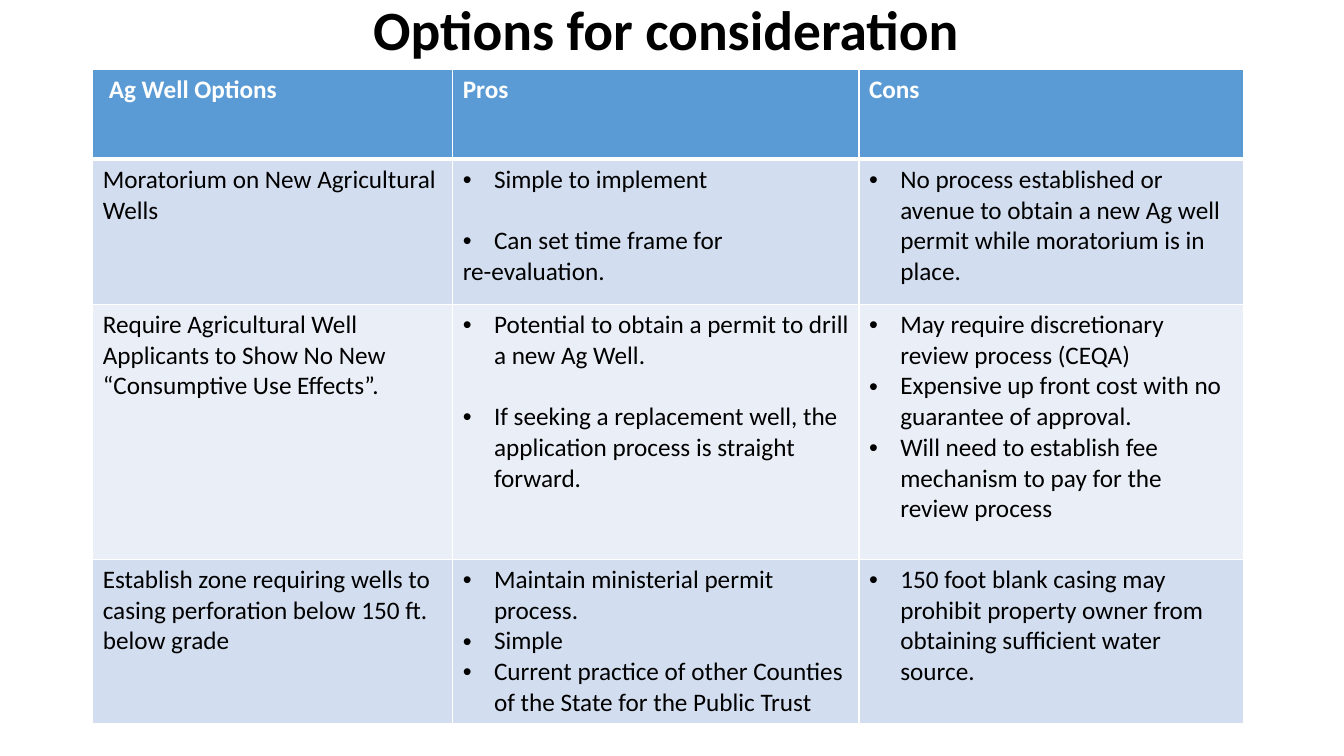
from lxml.etree import SubElement
from pptx import Presentation
from pptx.dml.color import RGBColor
from pptx.enum.text import MSO_ANCHOR, MSO_AUTO_SIZE, PP_ALIGN
from pptx.oxml import parse_xml
from pptx.oxml.ns import nsdecls, qn
from pptx.util import Emu, Inches, Pt

WIDTH, HEIGHT = Inches(13.33), Inches(7.5)
TITLE_BOX = (0.064, 0.021, 0.863, 0.043)
TABLE_BOX = (0.069, 0.092, 0.856, 0.864)
COLUMN_UNITS = (3.57, 4.03, 3.81)
ROW_UNITS = (0.89, 1.44, 2.53, 1.62)
HEADER_FILL, BAND_FILLS = "5B9BD5", ("D2DEEF", "EAEFF7")
WHITE, BLACK = "FFFFFF", "000000"
TITLE_FONT = {"name": "Calibri", "size": Pt(39.6), "bold": True}
HEADER_FONT = {"name": "Calibri", "size": Pt(18), "bold": True}
BODY_FONT = {"name": "Calibri", "size": Pt(18), "bold": False}
HANGING = Inches(0.31)
LINE_GAP = Pt(22)

HEADERS = ("Ag Well Options", "Pros", "Cons")
OPTIONS = (
    (
        [("plain", "Moratorium on New Agricultural Wells")],
        [("point", "Simple to implement"),
         ("spaced point", "Can set time frame for"),
         ("plain", "re-evaluation.")],
        [("point", "No process established or avenue to obtain a new Ag well "
                   "permit while moratorium is in place.")],
    ),
    (
        [("plain", "Require Agricultural Well Applicants to Show No New "
                   "“Consumptive Use Effects”.")],
        [("point", "Potential to obtain a permit to drill a new Ag Well."),
         ("spaced point", "If seeking a replacement well, the application "
                          "process is straight forward.")],
        [("point", "May require discretionary review process (CEQA)"),
         ("point", "Expensive up front cost with no guarantee of approval."),
         ("point", "Will need to establish fee mechanism to pay for the "
                   "review process")],
    ),
    (
        [("plain", "Establish zone requiring wells to casing perforation "
                   "below 150 ft. below grade")],
        [("point", "Maintain ministerial permit process."),
         ("point", "Simple"),
         ("point", "Current practice of other Counties of the State for the "
                   "Public Trust")],
        [("point", "150 foot blank casing may prohibit property owner from "
                   "obtaining sufficient water source.")],
    ),
)


def color(value):
    """Turn a hex string into a colour."""
    return RGBColor.from_string(value)


def place(box):
    """Turn shares of the slide into left, top, width and height."""
    return [Emu(round(share * side))
            for share, side in zip(box, (WIDTH, HEIGHT) * 2)]


def set_values(target, values):
    """Set every attribute in a dict of format values."""
    for name, value in values.items():
        setattr(target, name, value)


def format_font(font, values, hue):
    """Apply font values and a colour."""
    set_values(font, values)
    font.color.rgb = color(hue)


def add_bullet(para):
    """Give a paragraph a hanging bullet."""
    properties = para._p.get_or_add_pPr()
    properties.set("marL", str(HANGING))
    properties.set("indent", str(-HANGING))
    SubElement(properties, qn("a:buFont"), typeface="Arial")
    SubElement(properties, qn("a:buChar"), char="•")


def fill_cell(cell, entries, font, hue):
    """Write plain and bulleted paragraphs into a cell."""
    for index, (kind, text) in enumerate(entries):
        frame = cell.text_frame
        para = frame.paragraphs[0] if index == 0 else frame.add_paragraph()
        if kind == "spaced point":
            para.space_before = LINE_GAP
        if kind != "plain":
            add_bullet(para)
        para.text = text
        format_font(para.font, font, hue)
        for span in para.runs:
            format_font(span.font, font, hue)


def paint_cell(cell, fill, top, bottom):
    """Fill a cell and draw its white borders."""
    cell.fill.solid()
    cell.fill.fore_color.rgb = color(fill)
    widths = {"lnL": 1, "lnR": 1, "lnT": top, "lnB": bottom}
    for index, (side, width) in enumerate(widths.items()):
        cell._tc.get_or_add_tcPr().insert(index, parse_xml(
            f'<a:{side} {nsdecls("a")} w="{Pt(width)}"><a:solidFill>'
            f'<a:srgbClr val="{WHITE}"/></a:solidFill></a:{side}>'))


def add_title(page, box):
    """Place the slide title in its placeholder."""
    title = page.shapes.title
    set_values(title, dict(zip(("left", "top", "width", "height"), place(box))))
    frame = title.text_frame
    frame.text = "Options for consideration"
    set_values(frame, {"auto_size": MSO_AUTO_SIZE.NONE, "word_wrap": True,
                       "vertical_anchor": MSO_ANCHOR.MIDDLE})
    para = frame.paragraphs[0]
    set_values(para, {"alignment": PP_ALIGN.CENTER, "line_spacing": 0.9})
    format_font(para.runs[0].font, TITLE_FONT, BLACK)


def add_options_table(page, box):
    """Place the table of options with their pros and cons."""
    left, top, width, height = place(box)
    table = page.shapes.add_table(len(ROW_UNITS), len(COLUMN_UNITS),
                                  left, top, width, height).table
    for column, units in zip(table.columns, COLUMN_UNITS):
        column.width = round(width * units / sum(COLUMN_UNITS))
    for row, units in zip(table.rows, ROW_UNITS):
        row.height = round(height * units / sum(ROW_UNITS))
    for cell, text in zip(table.rows[0].cells, HEADERS):
        fill_cell(cell, [("plain", text)], HEADER_FONT, WHITE)
        paint_cell(cell, HEADER_FILL, 1, 3)
    table.cell(0, 0).margin_left = Inches(0.16)
    for index, option in enumerate(OPTIONS):
        for cell, entries in zip(table.rows[index + 1].cells, option):
            fill_cell(cell, entries, BODY_FONT, BLACK)
            paint_cell(cell, BAND_FILLS[index % 2], 3 if index == 0 else 1, 1)


def main():
    """Build the deck and save it."""
    deck = Presentation()
    set_values(deck, {"slide_width": WIDTH, "slide_height": HEIGHT})
    page = deck.slides.add_slide(deck.slide_layouts.get_by_name("Title Only"))
    add_title(page, TITLE_BOX)
    add_options_table(page, TABLE_BOX)
    deck.save("out.pptx")


if __name__ == "__main__":
    main()
